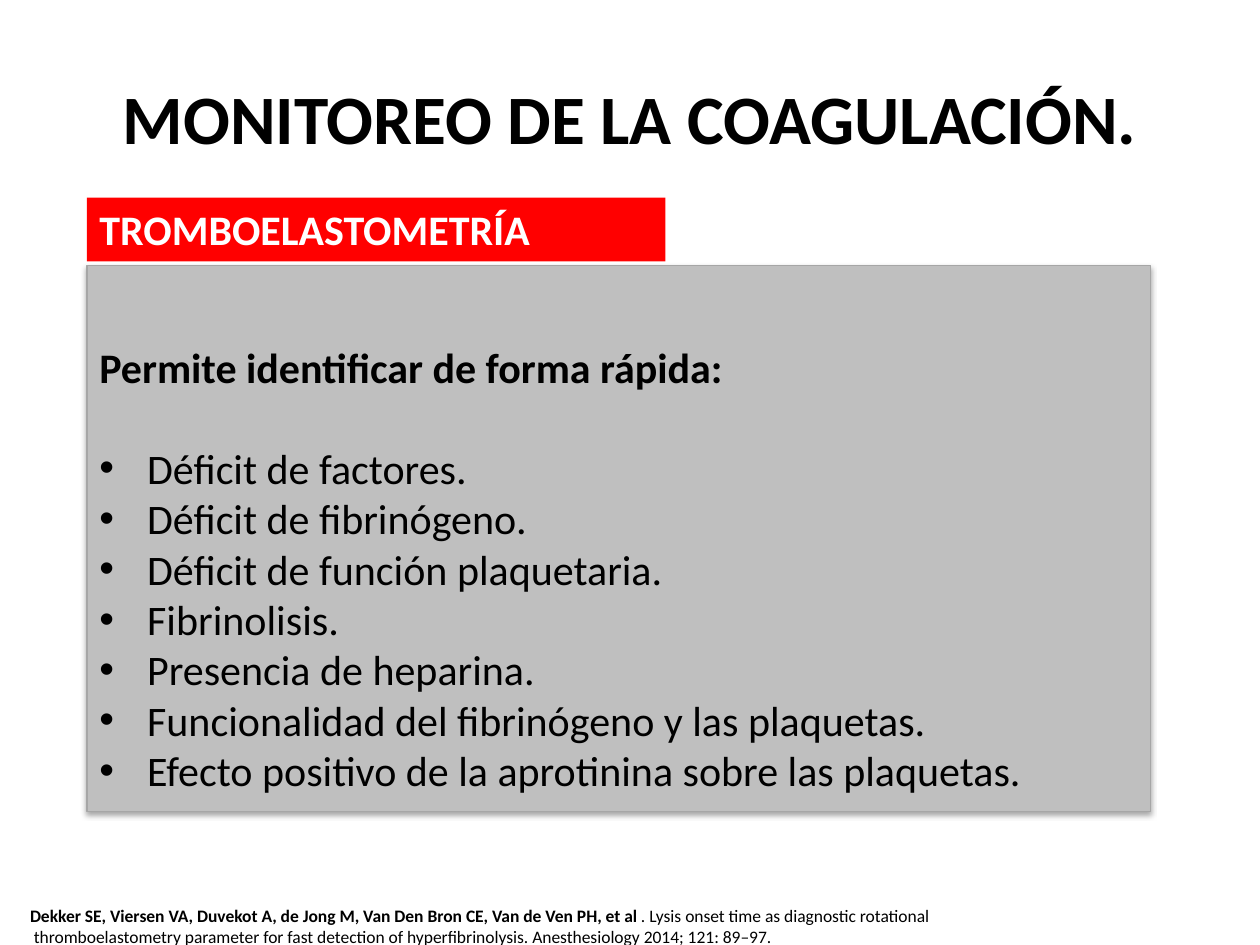
from lxml.etree import SubElement
from pptx import Presentation
from pptx.dml.color import RGBColor
from pptx.enum.shapes import MSO_SHAPE
from pptx.enum.text import MSO_ANCHOR, PP_ALIGN
from pptx.oxml.ns import qn
from pptx.util import Inches, Pt

WIDTH, HEIGHT = Inches(10), Inches(7.5)
FINDINGS = [
    "Déficit de factores.",
    "Déficit de fibrinógeno.",
    "Déficit de función plaquetaria.",
    "Fibrinolisis.",
    "Presencia de heparina.",
    "Funcionalidad del fibrinógeno y las plaquetas.",
    "Efecto positivo de la aprotinina sobre las plaquetas.",
]
AUTHORS = "Dekker SE, Viersen VA, Duvekot A, de Jong M, Van Den Bron CE, Van de Ven PH, et al"
CITATION = [
    " . Lysis onset time as diagnostic rotational",
    "thromboelastometry parameter for fast detection of hyperfibrinolysis. "
    "Anesthesiology 2014; 121: 89–97.",
]


def share(left, top, width, height):
    """Turn percentages of the slide's size into a box."""
    return (int(WIDTH * left / 100), int(HEIGHT * top / 100),
            int(WIDTH * width / 100), int(HEIGHT * height / 100))


def color(value):
    """Return a colour from a hex string."""
    return RGBColor.from_string(value)


def style(paragraph, size, bold=False, ink="000000", align=PP_ALIGN.JUSTIFY):
    """Set a paragraph's font and alignment."""
    paragraph.alignment = align
    font = paragraph.font
    font.name, font.size, font.bold = "Calibri", Pt(size), bold
    font.color.rgb = color(ink)


def add_bullet(paragraph, indent):
    """Give a paragraph a hanging bullet."""
    properties = paragraph._p.get_or_add_pPr()
    properties.set("marL", str(indent))
    properties.set("indent", str(-indent))
    bullet_font = SubElement(properties, qn("a:buFont"))
    bullet_font.set("typeface", "Arial")
    SubElement(properties, qn("a:buChar")).set("char", "•")
    default_run = properties.find(qn("a:defRPr"))
    if default_run is not None:
        properties.append(default_run)


def add_soft_shadow(shape):
    """Add a soft shadow below a shape."""
    shape.shadow.inherit = False
    effects = shape._element.spPr.find(qn("a:effectLst"))
    shadow = SubElement(effects, qn("a:outerShdw"), blurRad=str(Pt(3.1)),
                        dist=str(Pt(1.8)), dir="5400000", rotWithShape="0")
    ink = SubElement(shadow, qn("a:srgbClr"), val="000000")
    SubElement(ink, qn("a:alpha"), val="35000")


def add_rectangle(slide, box, fill):
    """Add a plain filled rectangle."""
    shape = slide.shapes.add_shape(MSO_SHAPE.RECTANGLE, *box)
    shape.shadow.inherit = False
    shape.fill.solid()
    shape.fill.fore_color.rgb = color(fill)
    shape.line.fill.background()
    return shape


def place_title(slide, box):
    """Place and format the title placeholder."""
    title = slide.shapes.title
    title.left, title.top, title.width, title.height = box
    title.text_frame.text = "MONITOREO DE LA COAGULACIÓN."
    title.text_frame.vertical_anchor = MSO_ANCHOR.MIDDLE
    style(title.text_frame.paragraphs[0], 39.6, True, align=PP_ALIGN.CENTER)


def add_banner(slide, box):
    """Add the red heading band."""
    frame = add_rectangle(slide, box, "FF0000").text_frame
    frame.text = "TROMBOELASTOMETRÍA"
    frame.vertical_anchor = MSO_ANCHOR.TOP
    style(frame.paragraphs[0], 24, True, "FFFFFF", PP_ALIGN.LEFT)


def add_findings(slide, box):
    """Add the grey panel with its lead line and bullets."""
    panel = add_rectangle(slide, box, "BFBFBF")
    panel.line.color.rgb = color("A6A6A6")
    panel.line.width = Pt(0.75)
    add_soft_shadow(panel)
    frame = panel.text_frame
    frame.vertical_anchor = MSO_ANCHOR.BOTTOM
    frame.margin_bottom = int(box[3] * 0.03)
    lead = frame.paragraphs[0]
    lead.text = "Permite identificar de forma rápida:"
    style(lead, 24, True)
    lead.space_after = Pt(29)
    for finding in FINDINGS:
        paragraph = frame.add_paragraph()
        paragraph.text = finding
        style(paragraph, 24)
        add_bullet(paragraph, Inches(0.38))


def add_citation(slide, box):
    """Add the source reference at the foot."""
    frame = slide.shapes.add_textbox(*box).text_frame
    frame.word_wrap = True
    first, second = frame.paragraphs[0], frame.add_paragraph()
    authors = first.add_run()
    authors.text = AUTHORS
    authors.font.bold = True
    first.add_run().text = CITATION[0]
    second.text = CITATION[1]
    for paragraph in (first, second):
        style(paragraph, 10)
    second._p.get_or_add_pPr().set("marL", str(Inches(0.03)))


def main():
    """Build and save the slide."""
    presentation = Presentation()
    presentation.slide_width, presentation.slide_height = WIDTH, HEIGHT
    slide = presentation.slides.add_slide(presentation.slide_layouts[5])
    place_title(slide, share(5, 4, 90, 16.67))
    add_banner(slide, share(6.9, 20.93, 45.9, 6.73))
    add_findings(slide, share(6.9, 28.13, 84.4, 57.73))
    add_citation(slide, share(1.4, 95.07, 96, 9.87))
    presentation.save("out.pptx")


if __name__ == "__main__":
    main()
